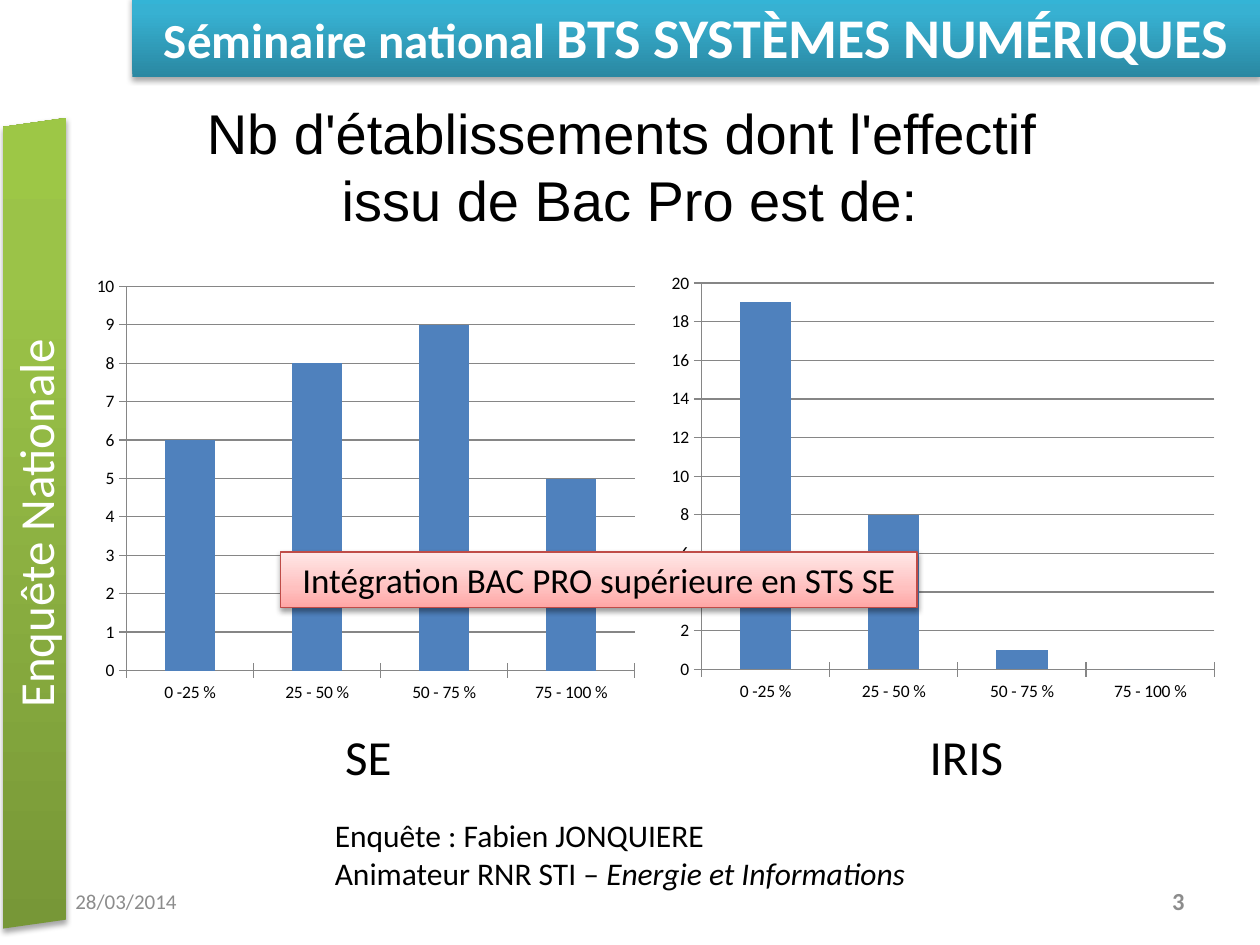
"""Build a slide comparing Bac Pro intake in the SE and IRIS options."""
from lxml import etree
from pptx import Presentation
from pptx.chart.data import CategoryChartData
from pptx.dml.color import RGBColor
from pptx.enum.chart import XL_CHART_TYPE, XL_TICK_MARK
from pptx.enum.shapes import MSO_SHAPE
from pptx.enum.text import MSO_ANCHOR, PP_ALIGN
from pptx.oxml.ns import qn
from pptx.util import Cm, Pt

LEFT, MID, RIGHT = PP_ALIGN.LEFT, PP_ALIGN.CENTER, PP_ALIGN.RIGHT
TOP, HALF = MSO_ANCHOR.TOP, MSO_ANCHOR.MIDDLE
RECT = MSO_SHAPE.RECTANGLE
COLS = XL_CHART_TYPE.COLUMN_CLUSTERED
CROSS = XL_TICK_MARK.CROSS

THEME = {
    "body": "Calibri", "head": "Arial",
    "black": "000000", "white": "FFFFFF", "grey": "8C8C8C",
    "grid": "868686", "bar": "4F81BD", "edge": "BF4C48",
    "blue": [(0, "2A88A2"), (80, "37B1D2"), (100, "34B4D6")],
    "green": [(0, "779737"), (80, "9BC348"), (100, "9DC746")],
    "pink": [(0, "FFA6A5"), (35, "FFC0BF"), (100, "FFE7E7")],
    "big": 32, "label": 28, "note": 20, "text": 18,
    "page": 14, "date": 12, "axis": 10,
}

BANNER = [[("Séminaire national ", {}),
           ("BTS SYSTÈMES NUMÉRIQUES", {"size": THEME["big"]})]]
SIDE = [[("Enquête Nationale", {})]]
SIDE_EDGE = [(0.06, 2.56), (1.33, 2.38), (1.33, 18.54), (0.06, 18.72)]
NOTE = [[("Intégration BAC PRO supérieure en STS SE", {})]]
TITLE = [[("Nb d'établissements dont l'effectif ", {}), ("\n", {}),
          ("issu de Bac Pro est de:", {})]]
CREDIT = [[("Enquête : Fabien JONQUIERE", {})],
          [("Animateur RNR STI\u00a0–", {}),
           ("\u00a0Energie et Informations", {"italic": True})]]

TEXTS = [
    (TITLE, (1.27, 1.75, 22.86, 3.18),
     {"size": THEME["big"], "face": THEME["head"], "align": MID, "anchor": HALF}),
    ([[("28/03/2014", {})]], (1.27, 17.65, 5.92, 1.02),
     {"size": THEME["date"], "color": THEME["grey"], "anchor": HALF}),
    ([[("3", {})]], (18.21, 17.65, 5.92, 1.02),
     {"size": THEME["page"], "color": THEME["grey"], "bold": True,
      "align": RIGHT, "anchor": HALF}),
    ([[("SE", {})]], (6.71, 14.53, 1.45, 1.45),
     {"size": THEME["label"], "wrap": False}),
    ([[("IRIS", {})]], (18.49, 14.53, 2.01, 1.45),
     {"size": THEME["label"], "wrap": False}),
    (CREDIT, (6.5, 16.33, 12.7, 1.8), {"size": THEME["text"]}),
]

BANDS = ["0 -25 %", "25 - 50 %", "50 - 75 %", "75 - 100 %"]
CHARTS = [
    ((6, 8, 9, 5), (1.4, 5.13, 11.51, 9.22), (0.1, 0.07, 0.89, 0.84)),
    ((19, 8, 1, 0), (13.31, 5.33, 11.4, 8.99), None),
]


def rgb(code):
    return RGBColor.from_string(code)


def place(box):
    return [Cm(n) for n in box]


def write(frame, paras, size=18, face=THEME["body"], color=THEME["black"],
          bold=False, align=LEFT, anchor=TOP, wrap=True):
    frame.word_wrap = wrap
    frame.vertical_anchor = anchor
    for i, runs in enumerate(paras):
        para = frame.paragraphs[0] if i == 0 else frame.add_paragraph()
        para.alignment = align
        for text, extra in runs:
            if text == "\n":
                para.add_line_break()
                continue
            run = para.add_run()
            run.text = text
            font = run.font
            font.name, font.bold = face, bold
            font.size = Pt(extra.get("size", size))
            font.italic = extra.get("italic", False)
            font.color.rgb = rgb(color)


def tint(parent, code, alpha=None):
    node = etree.SubElement(parent, qn("a:srgbClr"), val=code)
    if alpha:
        etree.SubElement(node, qn("a:alpha"), val=str(alpha * 1000))


def dress(shape, stops, edge=None, shade=35, drop=1.8):
    shape.shadow.inherit = False
    shape.fill.gradient()
    shape.fill.gradient_angle = 90
    if edge:
        shape.line.color.rgb = rgb(edge)
        shape.line.width = Pt(0.75)
    else:
        shape.line.fill.background()
    props = shape.element.spPr
    ramp = props.find(".//" + qn("a:gsLst"))
    for stop in list(ramp):
        ramp.remove(stop)
    for pos, code in stops:
        tint(etree.SubElement(ramp, qn("a:gs"), pos=str(pos * 1000)), code)
    cast = etree.SubElement(
        props.find(qn("a:effectLst")), qn("a:outerShdw"),
        blurRad=str(Pt(3.1)), dist=str(Pt(drop)), dir="5400000", rotWithShape="0")
    tint(cast, THEME["black"], shade)


def fix_plot(chart, area):
    plot = chart._chartSpace.find(".//" + qn("c:plotArea"))
    for old in plot.findall(qn("c:layout")):
        plot.remove(old)
    outer = etree.Element(qn("c:layout"))
    inner = etree.SubElement(outer, qn("c:manualLayout"))
    pairs = [("layoutTarget", "inner"), ("xMode", "edge"), ("yMode", "edge")]
    for tag, val in pairs + list(zip("xywh", area)):
        etree.SubElement(inner, qn("c:" + tag), val=str(val))
    plot.insert(0, outer)


def draw_chart(slide, vals, box, area):
    data = CategoryChartData()
    data.categories = BANDS
    data.add_series("Series 1", vals)
    chart = slide.shapes.add_chart(COLS, *place(box), data).chart
    chart.has_legend = chart.has_title = False
    chart.font.name, chart.font.size = THEME["body"], Pt(THEME["axis"])
    chart.font.color.rgb = rgb(THEME["black"])
    plot = chart.plots[0]
    plot.gap_width, plot.vary_by_categories = 150, False
    fill = plot.series[0].format.fill
    fill.solid()
    fill.fore_color.rgb = rgb(THEME["bar"])
    chart.value_axis.has_major_gridlines = True
    lines = [chart.value_axis.major_gridlines.format.line]
    for axis in (chart.category_axis, chart.value_axis):
        axis.major_tick_mark = CROSS
        lines.append(axis.format.line)
    for line in lines:
        line.color.rgb = rgb(THEME["grid"])
        line.width = Pt(0.75)
    if area:
        fix_plot(chart, area)


def main():
    deck = Presentation()
    deck.slide_width, deck.slide_height = Cm(25.4), Cm(19.05)
    slide = deck.slides.add_slide(deck.slide_layouts[6])
    shapes = slide.shapes

    banner = shapes.add_shape(RECT, *place((2.67, -0.08, 22.73, 1.63)))
    dress(banner, THEME["blue"])
    write(banner.text_frame, BANNER, size=THEME["label"], color=THEME["white"],
          bold=True, align=MID)

    for vals, box, area in CHARTS:
        draw_chart(slide, vals, box, area)
    for paras, box, style in TEXTS:
        write(shapes.add_textbox(*place(box)).text_frame, paras, **style)

    edge = [place(point) for point in SIDE_EDGE]
    path = shapes.build_freeform(*edge[0])
    path.add_line_segments(edge[1:], close=True)
    side = path.convert_to_shape()
    dress(side, THEME["green"])
    write(side.text_frame, SIDE, size=THEME["label"], color=THEME["white"],
          align=MID, anchor=HALF)
    side.text_frame._txBody.bodyPr.set("vert", "vert270")

    note = shapes.add_shape(RECT, *place((5.66, 11.13, 12.83, 1.12)))
    dress(note, THEME["pink"], edge=THEME["edge"], shade=38, drop=1.6)
    write(note.text_frame, NOTE, size=THEME["note"], align=MID, wrap=False)

    deck.save("out.pptx")


if __name__ == "__main__":
    main()
